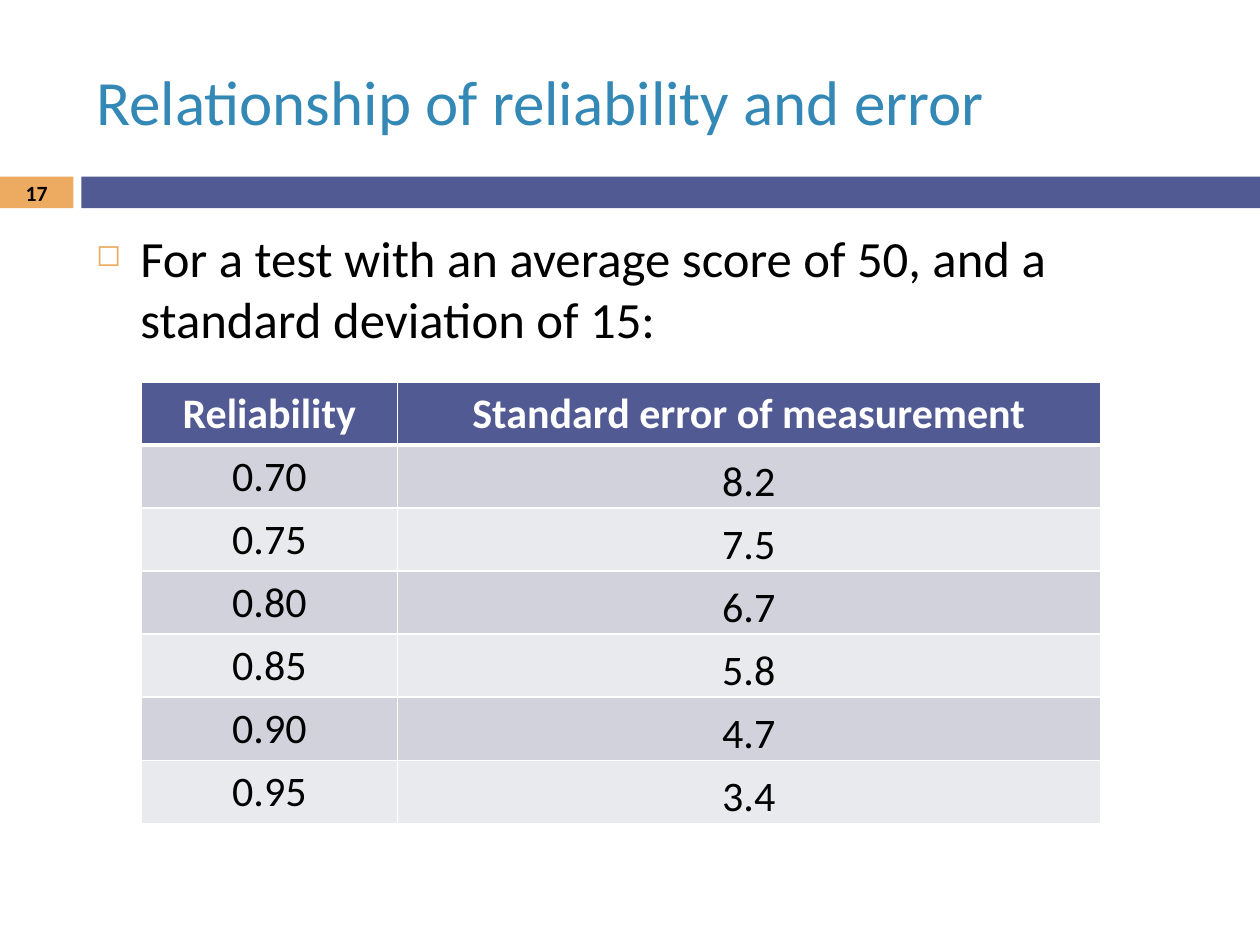
from lxml.etree import SubElement
from pptx import Presentation
from pptx.dml.color import RGBColor
from pptx.enum.shapes import MSO_SHAPE
from pptx.enum.text import MSO_ANCHOR, PP_ALIGN
from pptx.oxml import parse_xml
from pptx.oxml.ns import nsdecls, qn
from pptx.util import Cm, Pt

FONT = "Calibri"
BLACK, WHITE = "000000", "FFFFFF"
INDIGO, ORANGE, BLUE = "525A93", "EDAA61", "3488B6"
BAND_COLORS = ("D1D2DC", "E9EAEE")
ROWS = [
    ("Reliability", "Standard error of measurement"),
    ("0.70", "8.2"),
    ("0.75", "7.5"),
    ("0.80", "6.7"),
    ("0.85", "5.8"),
    ("0.90", "4.7"),
    ("0.95", "3.4"),
]


def color(hex_string):
    return RGBColor.from_string(hex_string)


def add_run(paragraph, text, size, font_color, bold=False):
    run = paragraph.add_run()
    run.text = text
    run.font.name = FONT
    run.font.size = Pt(size)
    run.font.bold = bold
    run.font.color.rgb = color(font_color)


def add_bar(slide, left, width):
    shape = slide.shapes.add_shape(
        MSO_SHAPE.RECTANGLE, Cm(left), Cm(3.56), Cm(width), Cm(0.64))
    shape.shadow.inherit = False
    shape.fill.solid()
    shape.fill.fore_color.rgb = color(INDIGO if left else ORANGE)
    shape.line.fill.background()


def add_text(slide, box, text, size, font_color, bold=False,
             anchor=MSO_ANCHOR.MIDDLE, align=PP_ALIGN.LEFT):
    shape = slide.shapes.add_textbox(*map(Cm, box))
    frame = shape.text_frame
    frame.word_wrap = True
    frame.vertical_anchor = anchor
    paragraph = frame.paragraphs[0]
    paragraph.alignment = align
    add_run(paragraph, text, size, font_color, bold)
    return paragraph


def add_bullet(paragraph, character, bullet_color, percent, indent):
    properties = paragraph._p.get_or_add_pPr()
    properties.set("marL", str(Cm(indent)))
    properties.set("indent", str(-Cm(indent)))
    bullet_fill = SubElement(properties, qn("a:buClr"))
    SubElement(bullet_fill, qn("a:srgbClr"), val=bullet_color)
    SubElement(properties, qn("a:buSzPct"), val=str(percent * 1000))
    SubElement(properties, qn("a:buChar"), char=character)


def set_borders(cell, top, bottom):
    properties = cell._tc.get_or_add_tcPr()
    widths = {"lnL": 1, "lnR": 1, "lnT": top, "lnB": bottom}
    for position, (side, width) in enumerate(widths.items()):
        properties.insert(position, parse_xml(
            f'<a:{side} {nsdecls("a")} w="{Pt(width)}"><a:solidFill>'
            f'<a:srgbClr val="{WHITE}"/></a:solidFill></a:{side}>'))


def fill_cell(cell, text, row, column):
    header = row == 0
    cell.fill.solid()
    cell.fill.fore_color.rgb = color(
        INDIGO if header else BAND_COLORS[(row - 1) % 2])
    set_borders(cell, 3 if row == 1 else 1, 3 if header else 1)
    # Error values sit at the foot of their cells
    if column == 1 and not header:
        cell.vertical_anchor = MSO_ANCHOR.BOTTOM
        cell.margin_left = cell.margin_right = cell.margin_top = Cm(0.03)
        cell.margin_bottom = Cm(0)
    paragraph = cell.text_frame.paragraphs[0]
    paragraph.alignment = PP_ALIGN.CENTER
    add_run(paragraph, text, 24, WHITE if header else BLACK, header)


def add_error_table(slide):
    table = slide.shapes.add_table(
        len(ROWS), 2, Cm(2.85), Cm(7.7), Cm(19.33), Cm(8.89)).table
    for column, width in zip(table.columns, (5.16, 14.17)):
        column.width = Cm(width)
    for row, values in enumerate(ROWS):
        for column, text in enumerate(values):
            fill_cell(table.cell(row, column), text, row, column)


def main():
    presentation = Presentation()
    presentation.slide_width, presentation.slide_height = Cm(25.4), Cm(19.05)
    slide = presentation.slides.add_slide(presentation.slide_layouts[6])

    # Divider bars
    add_bar(slide, 0, 1.48)
    add_bar(slide, 1.64, 23.76)

    # Title and slide number
    add_text(slide, (1.69, 0.64, 22.66, 2.75),
             "Relationship of reliability and error", 36, BLUE)
    add_text(slide, (0, 3.54, 1.48, 0.68), "17", 12.4, BLACK, bold=True,
             align=PP_ALIGN.CENTER)

    # Body statement
    statement = add_text(
        slide, (1.69, 4.45, 22.66, 12.5),
        "For a test with an average score of 50, and a standard deviation of 15:",
        29, BLACK, anchor=MSO_ANCHOR.TOP)
    statement.space_before = Pt(7)
    add_bullet(statement, "◻", ORANGE, 60, 0.89)

    # Reliability and error values
    add_error_table(slide)

    presentation.save("out.pptx")


if __name__ == "__main__":
    main()
